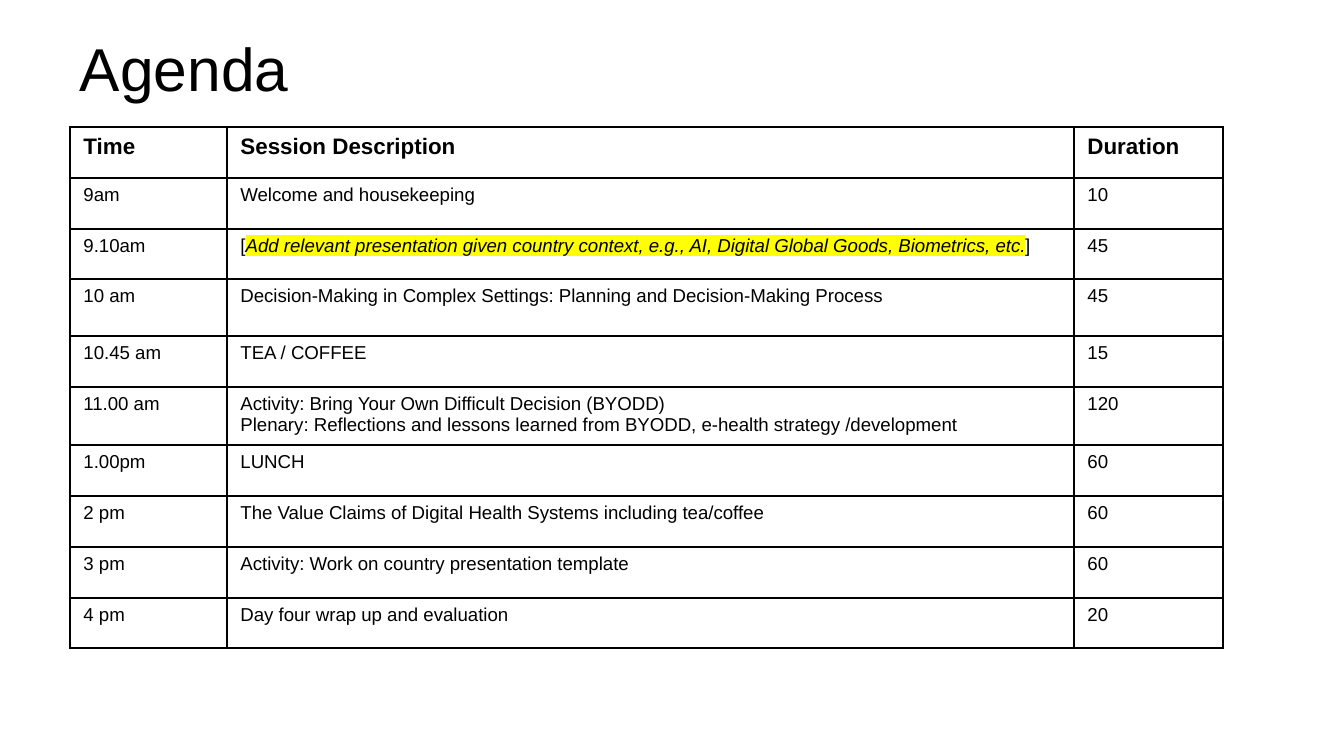
from itertools import pairwise

from lxml import etree
from pptx import Presentation
from pptx.dml.color import RGBColor
from pptx.enum.text import MSO_ANCHOR
from pptx.oxml.ns import qn
from pptx.util import Pt

BOTTOM = MSO_ANCHOR.BOTTOM
TOP = MSO_ANCHOR.TOP
SCALE = 914400 / 134.4
THEME = {
    "font": "Arial", "ink": "000000", "paper": "FFFFFF", "mark": "FFFF00",
    "title": 32.4, "head": 12, "body": 10, "line": 1,
}


def px(n):
    return round(n * SCALE)


def write(para, text, size, **extra):
    run = para.add_run()
    run.text = text
    run.font.color.rgb = RGBColor.from_string(THEME["ink"])
    style = {"name": THEME["font"], "size": Pt(size), **extra}
    for key, value in style.items():
        setattr(run.font, key, value)
    return run


prs = Presentation()
prs.slide_width, prs.slide_height = px(1344), px(756)
slide = prs.slides.add_slide(prs.slide_layouts[6])

title = slide.shapes.add_textbox(px(70), px(35), px(278), px(75)).text_frame
form = {
    "word_wrap": True, "vertical_anchor": BOTTOM,
    "margin_left": px(10), "margin_right": px(10),
    "margin_top": px(5), "margin_bottom": px(5),
}
for key, value in form.items():
    setattr(title, key, value)
title.paragraphs[0].line_spacing = 0.9
write(title.paragraphs[0], "Agenda", THEME["title"])

ROWS = [
    ("Time", "Session Description", "Duration"),
    ("9am", "Welcome and housekeeping", "10"),
    ("9.10am", "[*Add relevant presentation given country context, e.g., AI, "
     "Digital Global Goods, Biometrics, etc.*]", "45"),
    ("10 am", "Decision-Making in Complex Settings: Planning and "
     "Decision-Making Process", "45"),
    ("10.45 am", "TEA / COFFEE", "15"),
    ("11.00 am", "Activity: Bring Your Own Difficult Decision (BYODD)\n"
     "Plenary: Reflections and lessons learned from BYODD, "
     "e-health strategy /development", "120"),
    ("1.00pm", "LUNCH", "60"),
    ("2 pm", "The Value Claims of Digital Health Systems including tea/coffee",
     "60"),
    ("3 pm", "Activity: Work on country presentation template", "60"),
    ("4 pm", "Day four wrap up and evaluation", "20"),
]
XS = [70, 227, 1074, 1223]
YS = [127, 178, 229, 279, 336, 387, 443, 494, 545, 596, 646]

table = slide.shapes.add_table(
    len(ROWS), 3, px(XS[0]), px(YS[0]), px(XS[-1] - XS[0]), px(YS[-1] - YS[0])
).table
table.first_row = table.horz_banding = False
for col, (left, right) in zip(table.columns, pairwise(XS)):
    col.width = px(right - left)
for row, (top, base) in zip(table.rows, pairwise(YS)):
    row.height = px(base - top)

for r, row in enumerate(ROWS):
    size = THEME["body"] if r else THEME["head"]
    for c, text in enumerate(row):
        cell = table.cell(r, c)
        cell.vertical_anchor = TOP
        props = cell._tc.get_or_add_tcPr()
        for side in ("lnL", "lnR", "lnT", "lnB"):
            line = etree.SubElement(
                props, qn("a:" + side), w=str(Pt(THEME["line"])))
            fill = etree.SubElement(line, qn("a:solidFill"))
            etree.SubElement(fill, qn("a:srgbClr"), val=THEME["ink"])
        cell.fill.solid()
        cell.fill.fore_color.rgb = RGBColor.from_string(THEME["paper"])
        for n, words in enumerate(text.split("\n")):
            frame = cell.text_frame
            para = frame.add_paragraph() if n else frame.paragraphs[0]
            for i, part in enumerate(words.split("*")):
                run = write(para, part, size, bold=r == 0, italic=i == 1)
                if i == 1:
                    mark = etree.Element(qn("a:highlight"))
                    etree.SubElement(mark, qn("a:srgbClr"), val=THEME["mark"])
                    run._r.rPr.find(qn("a:solidFill")).addnext(mark)

prs.save("out.pptx")
